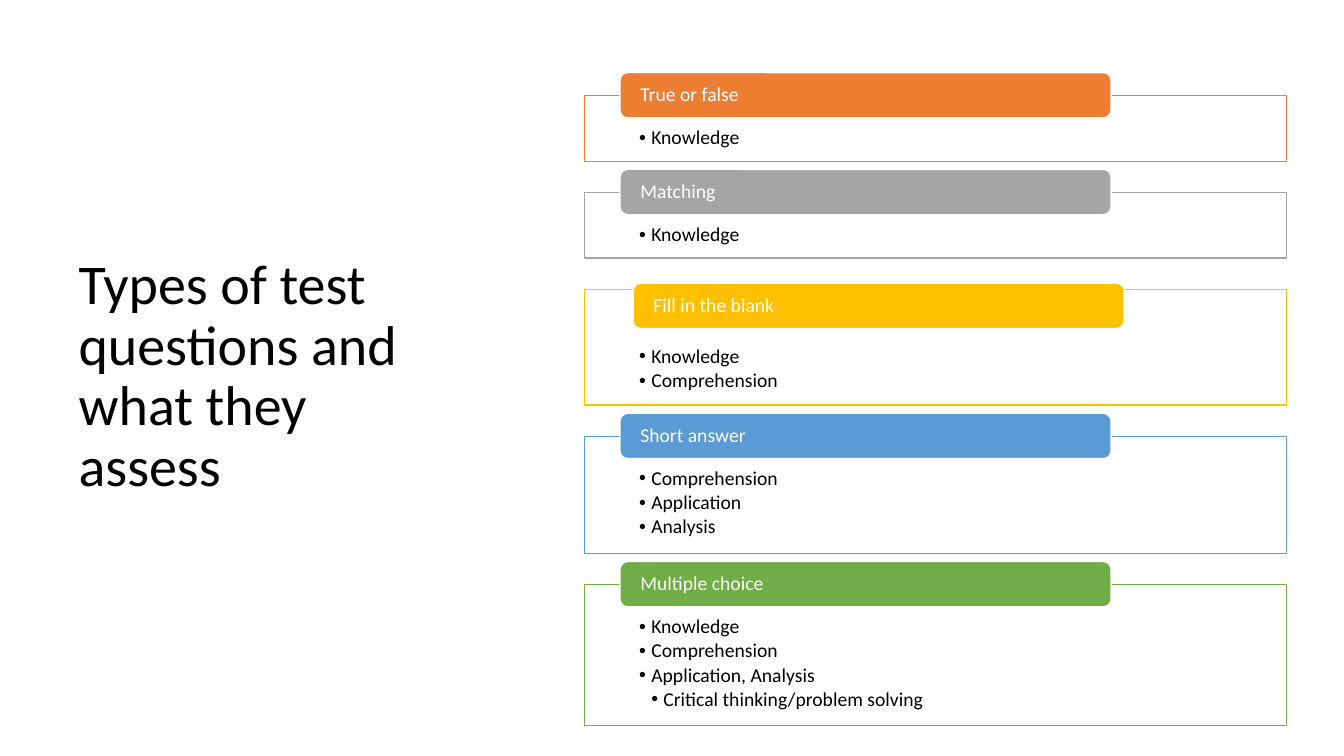
from dataclasses import dataclass

from lxml import etree
from pptx import Presentation
from pptx.dml.color import RGBColor
from pptx.enum.shapes import MSO_SHAPE
from pptx.enum.text import MSO_ANCHOR, MSO_AUTO_SIZE, PP_ALIGN
from pptx.oxml.ns import qn
from pptx.shapes.autoshape import Shape
from pptx.slide import Slide
from pptx.text.text import TextFrame, _Paragraph
from pptx.util import Pt

PX = 9144
RECT = MSO_SHAPE.RECTANGLE
ROUND = MSO_SHAPE.ROUNDED_RECTANGLE
TOP = MSO_ANCHOR.TOP
MIDDLE = MSO_ANCHOR.MIDDLE
LEFT = PP_ALIGN.LEFT
FIXED = MSO_AUTO_SIZE.NONE

BLACK = RGBColor(0x00, 0x00, 0x00)
WHITE = RGBColor(0xFF, 0xFF, 0xFF)
ORANGE = RGBColor(0xED, 0x7D, 0x31)
GRAY = RGBColor(0xA5, 0xA5, 0xA5)
GOLD = RGBColor(0xFF, 0xC0, 0x00)
BLUE = RGBColor(0x5B, 0x9B, 0xD5)
GREEN = RGBColor(0x70, 0xAD, 0x47)

FONT = "Calibri"
BOX_X, BOX_Y, BOX_W, GAP = 580, 95, 696, 31
TAB_X, TAB_W, TAB_H, TAB_RISE = 615, 487, 45, 23
INDENT = 12


@dataclass(frozen=True)
class Item:
    text: str
    level: int = 1


@dataclass(frozen=True)
class Kind:
    name: str
    color: RGBColor
    height: int
    items: tuple[Item, ...]
    inset: int = 32
    shift_x: int = 0
    shift_y: int = 0


KNOW = Item("Knowledge")
COMP = Item("Comprehension")
KINDS = (
    Kind("True or false", ORANGE, 65, (KNOW,)),
    Kind("Matching", GRAY, 65, (KNOW,)),
    Kind("Fill in the blank", GOLD, 115, (KNOW, COMP), 57, 13, 17),
    Kind("Short answer", BLUE, 116, (COMP, Item("Application"), Item("Analysis"))),
    Kind("Multiple choice", GREEN, 140, (
        KNOW, COMP, Item("Application, Analysis"),
        Item("Critical thinking/problem solving", 2))),
)


def style(para: _Paragraph, size: int, color: RGBColor) -> None:
    para.alignment = LEFT
    para.line_spacing = 0.9
    para.font.name = FONT
    para.font.size = Pt(size)
    para.font.color.rgb = color


def bullet(para: _Paragraph, level: int) -> None:
    para.level = level
    para.space_after = Pt(2.1)
    props = para._p.get_or_add_pPr()
    props.set("marL", str(INDENT * level * PX))
    props.set("indent", str(-INDENT * PX))
    etree.SubElement(props, qn("a:buFont")).set("typeface", "Arial")
    etree.SubElement(props, qn("a:buChar")).set("char", "•")
    props.append(props.find(qn("a:defRPr")))


def set_frame(frame: TextFrame, side: int, top: int, bottom: int) -> None:
    frame.word_wrap = True
    frame.margin_left = frame.margin_right = side * PX
    frame.margin_top = top * PX
    frame.margin_bottom = bottom * PX


def add_block(slide: Slide, form: MSO_SHAPE, x: int, y: int, w: int, h: int,
              fill: RGBColor, line: RGBColor) -> Shape:
    block = slide.shapes.add_shape(form, x * PX, y * PX, w * PX, h * PX)
    block.shadow.inherit = False
    block.fill.solid()
    block.fill.fore_color.rgb = fill
    block.line.color.rgb = line
    block.line.width = Pt(1)
    return block


def add_kind(slide: Slide, kind: Kind, y: int) -> None:
    box = add_block(slide, RECT, BOX_X, y, BOX_W, kind.height, WHITE, kind.color)
    frame = box.text_frame
    set_frame(frame, 54, kind.inset, 11)
    frame.vertical_anchor = TOP
    for i, item in enumerate(kind.items):
        para = frame.add_paragraph() if i else frame.paragraphs[0]
        para.text = item.text
        style(para, 14, BLACK)
        bullet(para, item.level)

    tab = add_block(slide, ROUND, TAB_X + kind.shift_x, y - TAB_RISE + kind.shift_y,
                    TAB_W, TAB_H, kind.color, WHITE)
    frame = tab.text_frame
    set_frame(frame, 18, 0, 0)
    frame.vertical_anchor = MIDDLE
    frame.text = kind.name
    style(frame.paragraphs[0], 14, WHITE)


def add_title(slide: Slide) -> None:
    title = slide.shapes.title
    title.left, title.top = 68 * PX, 127 * PX
    title.width, title.height = 394 * PX, 495 * PX
    frame = title.text_frame
    frame.text = "Types of test questions and what they assess"
    set_frame(frame, 10, 5, 5)
    frame.auto_size = FIXED
    frame.vertical_anchor = MIDDLE
    style(frame.paragraphs[0], 40, BLACK)


def main() -> None:
    deck = Presentation()
    deck.slide_width, deck.slide_height = 1333 * PX, 750 * PX
    slide = deck.slides.add_slide(deck.slide_layouts[5])
    add_title(slide)
    y = BOX_Y
    for kind in KINDS:
        add_kind(slide, kind, y)
        y += kind.height + GAP
    deck.save("out.pptx")


if __name__ == "__main__":
    main()
